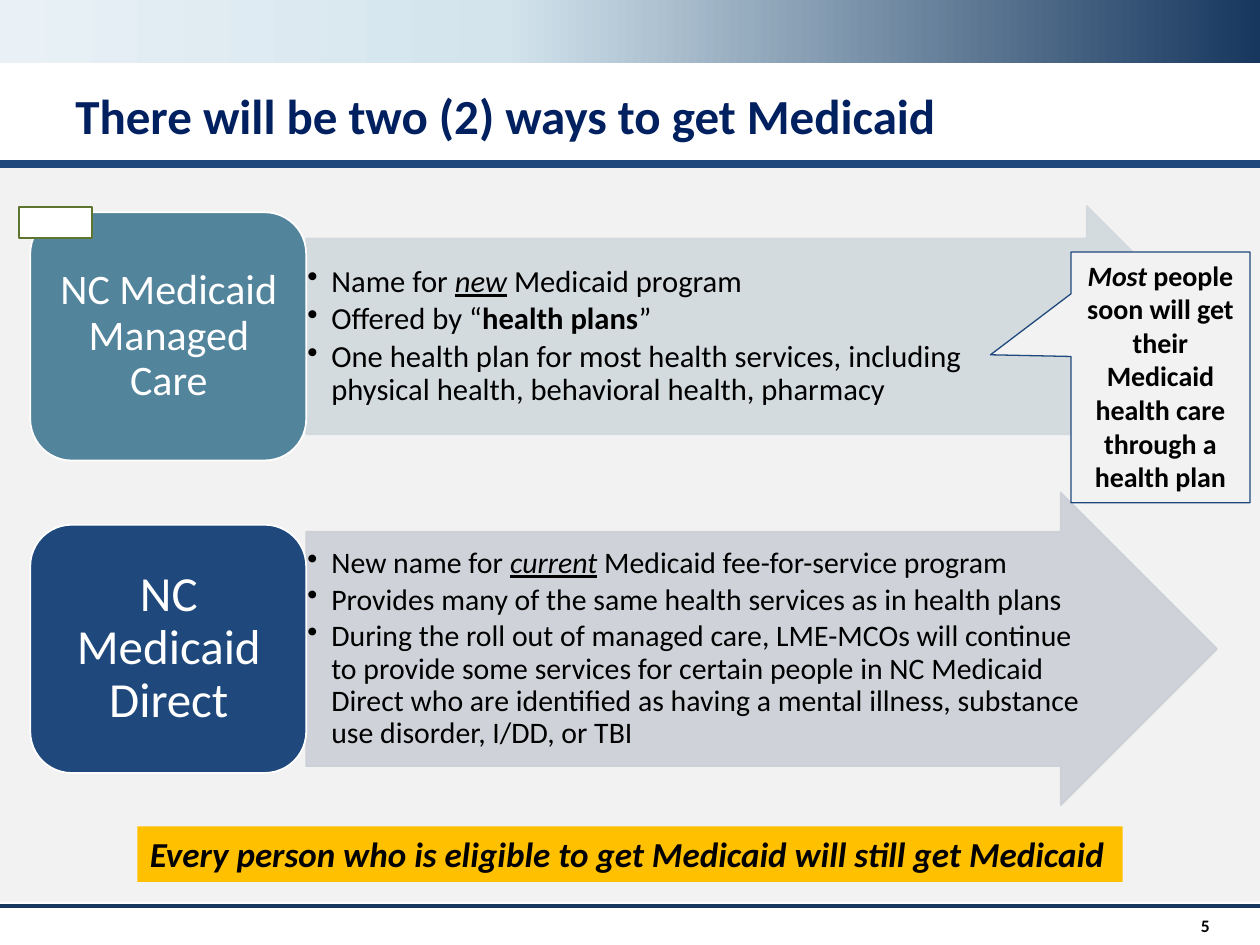
from copy import deepcopy
from dataclasses import dataclass

from lxml.etree import SubElement
from pptx import Presentation
from pptx.dml.color import RGBColor as RGB
from pptx.enum.shapes import MSO_CONNECTOR as Line, MSO_SHAPE as Shape
from pptx.enum.text import MSO_ANCHOR as Anchor, MSO_AUTO_SIZE as Auto, PP_ALIGN as Align
from pptx.oxml.ns import qn
from pptx.util import Inches, Pt


@dataclass(frozen=True)
class Theme:
    font: str = "Calibri"
    title: str = "002060"
    dark: str = "17375E"
    navy: str = "1F497D"
    teal: str = "52849C"
    pale_teal: str = "D1D9DE"
    pale_navy: str = "CCCFD7"
    sky: str = "D3E4ED"
    mist: str = "E9F1F6"
    panel: str = "F2F2F2"
    gold: str = "FFC000"
    green: str = "5E752F"
    black: str = "000000"
    white: str = "FFFFFF"
    title_size: float = 28
    banner_size: float = 20
    callout_size: float = 16
    number_size: float = 10


class SlideBuilder:
    """Draws on one slide; lengths are cells of a grid of 100 columns and 75 rows."""

    COLS, ROWS = 100, 75

    def __init__(self, prs, theme):
        self.theme = theme
        self.cell_w = prs.slide_width / self.COLS
        self.cell_h = prs.slide_height / self.ROWS
        self.s = prs.slides.add_slide(prs.slide_layouts[6])

    def grid(self, x, y, w, h):
        return (round(x * self.cell_w), round(y * self.cell_h),
                round(w * self.cell_w), round(h * self.cell_h))

    def shape(self, kind, box, fill, line=None, width=1, alpha=None, adj=()):
        sp = self.s.shapes.add_shape(kind, *self.grid(*box))
        sp.shadow.inherit = False
        sp.fill.solid()
        sp.fill.fore_color.rgb = RGB.from_string(fill)
        if line:
            sp.line.color.rgb = RGB.from_string(line)
            sp.line.width = Pt(width)
        else:
            sp.line.fill.background()
        for i, value in enumerate(adj):
            sp.adjustments[i] = value
        if alpha:
            for color in sp._element.spPr.iter(qn("a:srgbClr")):
                SubElement(color, qn("a:alpha"), val=str(alpha * 1000))
        return sp

    def gradient_band(self, box, stops, angle):
        sp = self.shape(Shape.RECTANGLE, box, self.theme.white)
        sp.fill.gradient()
        sp.fill.gradient_angle = angle
        stop_list = sp._element.spPr.find(".//" + qn("a:gsLst"))
        while len(stop_list) < len(stops):
            stop_list.append(deepcopy(stop_list[0]))
        for stop, (position, color) in zip(sp.fill.gradient_stops, stops):
            stop.position = position
            stop.color.rgb = RGB.from_string(color)

    def rule(self, y, color, width):
        left, top, right, _ = self.grid(0, y, self.COLS, 0)
        line = self.s.shapes.add_connector(Line.STRAIGHT, left, top, right, top)
        line.line.color.rgb = RGB.from_string(color)
        line.line.width = Pt(width)
        SubElement(line._element.spPr, qn("a:effectLst"))

    def text_box(self, box, paragraphs, **fmt):
        sp = self.s.shapes.add_textbox(*self.grid(*box))
        self.set_text(sp, paragraphs, **fmt)

    def set_text(self, sp, paragraphs, size, color=None, bold=False, align=Align.LEFT,
                 anchor=Anchor.TOP, spacing=None, after=None, inset=(0.1, 0.05),
                 bullet=False, wrap=True, auto=Auto.NONE):
        """Fill sp; a paragraph is a list of (text, styles), where styles holds b, i or u."""
        tf = sp.text_frame
        tf.word_wrap, tf.auto_size, tf.vertical_anchor = wrap, auto, anchor
        tf.margin_left = tf.margin_right = Inches(inset[0])
        tf.margin_top = tf.margin_bottom = Inches(inset[1])
        for n, runs in enumerate(paragraphs):
            p = tf.paragraphs[0] if n == 0 else tf.add_paragraph()
            p.alignment, p.line_spacing = align, spacing
            if after:
                p.space_after = Pt(after)
            if bullet:
                self.add_bullet(p)
            for text, styles in runs:
                for k, part in enumerate(text.split("\n")):
                    if k:
                        p.add_line_break()
                    r = p.add_run()
                    r.text = part
                    r.font.name, r.font.size = self.theme.font, Pt(size)
                    r.font.color.rgb = RGB.from_string(color or self.theme.black)
                    r.font.bold = bold or "b" in styles
                    r.font.italic = "i" in styles
                    r.font.underline = "u" in styles

    def add_bullet(self, p, indent=0.19):
        pPr = p._p.get_or_add_pPr()
        pPr.set("marL", str(Inches(indent)))
        pPr.set("indent", str(-Inches(indent)))
        SubElement(pPr, qn("a:buChar"), char="•")

    def program(self, middle, arrow_h, text_w, name, points, fill, pale,
                name_size, name_inset, size):
        """A named block with an arrow of points, centred on row `middle`."""
        body_h = arrow_h * 0.75
        self.shape(Shape.RIGHT_ARROW, (24.3, middle - arrow_h / 2, 72.3, arrow_h),
                   pale, line=pale, alpha=90, adj=(0.75, 0.5))
        self.text_box((24.3, middle - body_h / 2, text_w, body_h), points, size=size,
                      anchor=Anchor.MIDDLE, spacing=0.9, after=size * 0.15,
                      inset=(0.01, 0.01), bullet=True)
        self.shape(Shape.ROUNDED_RECTANGLE, (2.4, middle - 9.85, 21.9, 19.7),
                   fill, line=self.theme.white)
        self.text_box((3.4, middle - 8.9, 20, 17.8), [[(name, "")]], size=name_size,
                      color=self.theme.white, align=Align.CENTER,
                      anchor=Anchor.MIDDLE, spacing=0.9, inset=name_inset)


MANAGED_CARE = [
    [("Name for ", ""), ("new", "iu"), (" Medicaid program", "")],
    [("Offered by “", ""), ("health plans", "b"), ("”", "")],
    [("One health plan for most health services, including\n"
      "physical health, behavioral health, pharmacy", "")],
]
DIRECT = [
    [("New name for ", ""), ("current", "iu"), (" Medicaid fee-for-service program", "")],
    [("Provides many of the same health services as in health plans", "")],
    [("During the roll out of managed care, LME-MCOs will continue to provide some "
      "services for certain people in NC Medicaid Direct who are identified as having "
      "a mental illness, substance use disorder, I/DD, or TBI", "")],
]


def main():
    prs = Presentation()
    prs.slide_width, prs.slide_height = Inches(10), Inches(7.5)
    t = Theme()
    b = SlideBuilder(prs, t)

    b.gradient_band((0, 0, 100, 5), [(0, t.dark), (0.6, t.sky), (1, t.mist)], 180)
    b.rule(12.9, t.title, 2)
    b.rule(71.9, t.dark, 2.25)
    b.shape(Shape.RECTANGLE, (0, 13, 100, 58.6), t.panel)
    b.text_box((5, 6.8, 90, 6), [[("There will be two (2) ways to get Medicaid", "")]],
               size=t.title_size, color=t.title, bold=True, spacing=0.9)
    b.rule(13, t.navy, 4.5)
    b.text_box((90.8, 71.9, 6.2, 3.1), [[("5", "")]], size=t.number_size, bold=True,
               align=Align.RIGHT, anchor=Anchor.MIDDLE)

    b.program(26.7, 20.7, 64.6, "NC Medicaid Managed Care", MANAGED_CARE,
              t.teal, t.pale_teal, name_size=24, name_inset=(0.1, 0.05), size=17.5)
    b.program(51.5, 24.8, 63, "NC Medicaid Direct", DIRECT,
              t.navy, t.pale_navy, name_size=28, name_inset=(0.12, 0.06), size=17)

    banner = b.shape(Shape.RECTANGLE, (10.9, 65.6, 78.2, 4.4), t.gold)
    b.set_text(banner, [[("Every person who is eligible to get Medicaid "
                          "will still get Medicaid", "i")]],
               size=t.banner_size, bold=True, wrap=False, auto=Auto.SHAPE_TO_FIT_TEXT)
    callout = b.shape(Shape.RECTANGULAR_CALLOUT, (85, 20, 14.2, 19.9), t.panel,
                      line=t.navy, width=0.75, adj=(-0.95, -0.09))
    b.set_text(callout, [[("Most", "i"),
                          (" people soon will get their Medicaid health care "
                           "through a health plan", "")]],
               size=t.callout_size, bold=True, align=Align.CENTER,
               auto=Auto.SHAPE_TO_FIT_TEXT)
    b.shape(Shape.RECTANGLE, (1.5, 16.4, 5.8, 2.5), t.white, line=t.green)

    prs.save("out.pptx")


if __name__ == "__main__":
    main()
